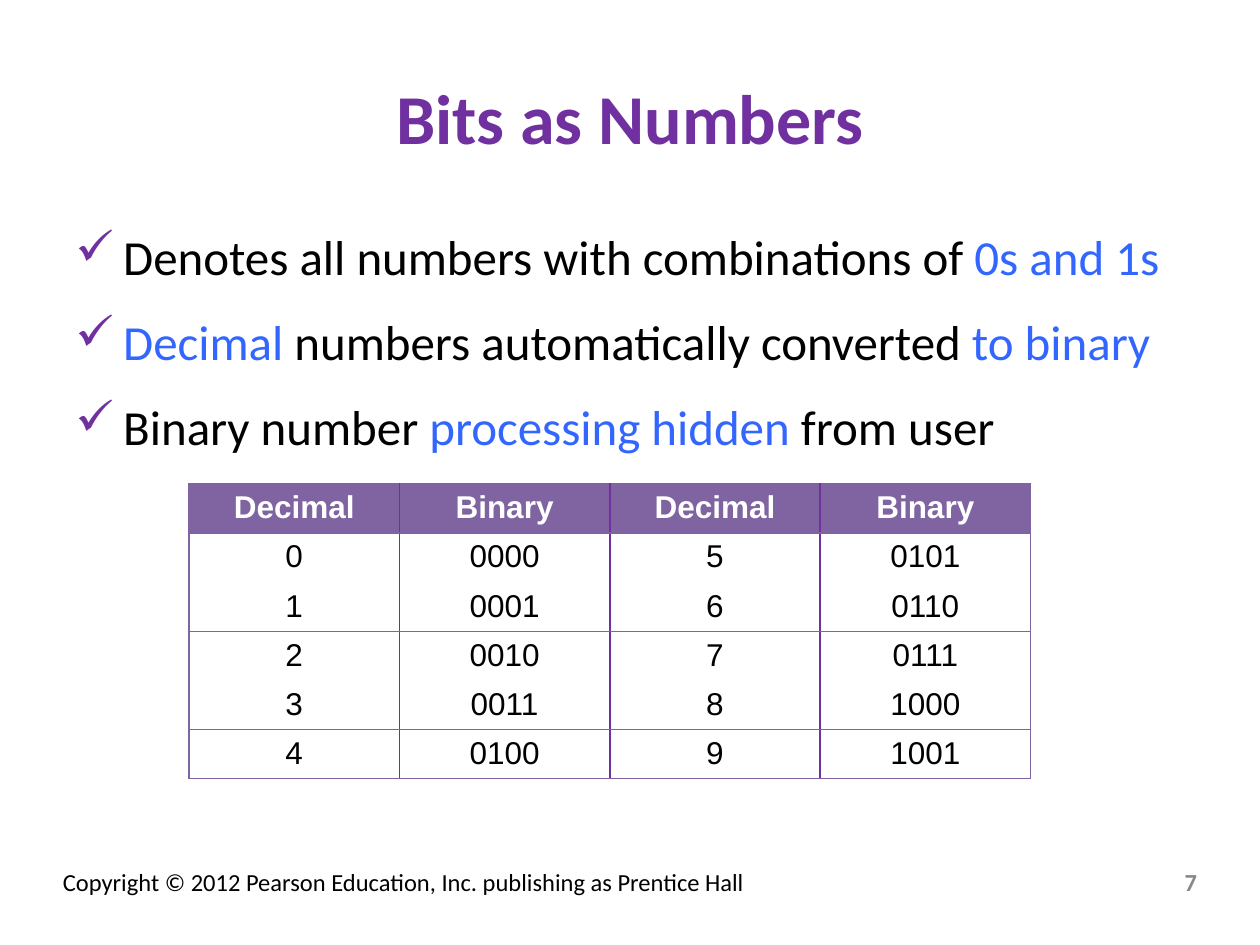
from lxml import etree
from pptx import Presentation
from pptx.dml.color import RGBColor
from pptx.enum import text
from pptx.oxml import ns
from pptx.util import Inches, Pt

COLORS = {
    "purple": "7030A0",
    "header": "8064A2",
    "blue": "3366FF",
    "black": "000000",
    "white": "FFFFFF",
    "gray": "888888",
}
LEFT, CENTER, RIGHT = text.PP_ALIGN.LEFT, text.PP_ALIGN.CENTER, text.PP_ALIGN.RIGHT
TOP, MIDDLE = text.MSO_ANCHOR.TOP, text.MSO_ANCHOR.MIDDLE

BULLETS = [
    [("Denotes all numbers with combinations of ", "black"), ("0s and 1s", "blue")],
    [("Decimal", "blue"), (" numbers automatically converted ", "black"), ("to binary", "blue")],
    [("Binary number ", "black"), ("processing hidden ", "blue"), ("from user", "black")],
]
HALF = 5
ROWS = [["Decimal", "Binary"] * 2] + [
    [label for number in (low, low + HALF) for label in (str(number), f"{number:04b}")]
    for low in range(HALF)
]


class SlideBuilder:
    def __init__(self, page):
        self.page = page

    def style(self, para, size, color, font="Calibri", bold=False, align=LEFT):
        para.alignment = align
        para.font.name = font
        para.font.size = Pt(size)
        para.font.bold = bold
        para.font.color.rgb = RGBColor.from_string(COLORS[color])

    def frame(self, left, top, width, height, anchor=TOP):
        box = self.page.shapes.add_textbox(Inches(left), Inches(top), Inches(width), Inches(height))
        box.text_frame.word_wrap = True
        box.text_frame.vertical_anchor = anchor
        return box.text_frame

    def label(self, words, place, anchor=TOP, **look):
        para = self.frame(*place, anchor).paragraphs[0]
        para.text = words
        self.style(para, **look)

    def bullets(self, lines, place):
        frame = self.frame(*place)
        for index, spans in enumerate(lines):
            para = frame.paragraphs[0] if index == 0 else frame.add_paragraph()
            props = para._p.get_or_add_pPr()
            props.set("marL", str(Inches(0.38)))
            props.set("indent", str(Inches(-0.38)))
            tint = etree.SubElement(props, ns.qn("a:buClr"))
            etree.SubElement(tint, ns.qn("a:srgbClr"), val=COLORS["purple"])
            etree.SubElement(props, ns.qn("a:buChar"), char="✓")
            self.style(para, 28, "black")
            if index:
                para.space_before = Pt(15)
            for words, color in spans:
                span = para.add_run()
                span.text = words
                span.font.color.rgb = RGBColor.from_string(COLORS[color])

    def border(self, cell, side, color=None, width=0.75):
        line = etree.SubElement(cell._tc.get_or_add_tcPr(), ns.qn(f"a:ln{side}"), w=str(Pt(width)))
        if color:
            fill = etree.SubElement(line, ns.qn("a:solidFill"))
            etree.SubElement(fill, ns.qn("a:srgbClr"), val=COLORS[color])
        else:
            etree.SubElement(line, ns.qn("a:noFill"))

    def table(self, rows, left, top, column_width, row_height):
        last_row, last_column = len(rows) - 1, len(rows[0]) - 1
        grid = self.page.shapes.add_table(
            len(rows), len(rows[0]), Inches(left), Inches(top),
            Inches(column_width * len(rows[0])), Inches(row_height * len(rows)),
        ).table
        for column in grid.columns:
            column.width = Inches(column_width)
        inner, outer, none = ("purple", 1), ("header", 0.75), ()
        for r, row in enumerate(rows):
            grid.rows[r].height = Inches(row_height)
            ruled_above = r == 0 or r % 2 == 1
            ruled_below = r == last_row or r % 2 == 0
            for c, words in enumerate(row):
                cell = grid.cell(r, c)
                cell.margin_bottom = Inches(0.04)
                self.border(cell, "L", *(outer if c == 0 else inner))
                self.border(cell, "R", *(outer if c == last_column else inner))
                self.border(cell, "T", *(outer if ruled_above else none))
                self.border(cell, "B", *(outer if ruled_below else none))
                if r == 0:
                    cell.fill.solid()
                    cell.fill.fore_color.rgb = RGBColor.from_string(COLORS["header"])
                else:
                    cell.fill.background()
                cell.text = words
                self.style(cell.text_frame.paragraphs[0], 18, "black" if r else "white",
                           font="Arial", bold=r == 0, align=CENTER)


def main():
    deck = Presentation()
    deck.slide_width, deck.slide_height = Inches(10), Inches(7.5)
    builder = SlideBuilder(deck.slides.add_slide(deck.slide_layouts[6]))
    builder.label("Copyright © 2012 Pearson Education, Inc. publishing as Prentice Hall",
                  (0.4, 6.83, 7.6, 0.34), size=14, color="black")
    builder.label("Bits as Numbers", (0.5, 0.3, 9, 1.25), MIDDLE,
                  size=40, color="purple", bold=True, align=CENTER)
    builder.bullets(BULLETS, (0.5, 1.75, 9, 5))
    builder.label("7", (7.27, 6.83, 2.33, 0.34), MIDDLE,
                  size=14, color="gray", bold=True, align=RIGHT)
    builder.table(ROWS, 1.5, 3.84, 1.67, 0.38)
    deck.save("out.pptx")


if __name__ == "__main__":
    main()
